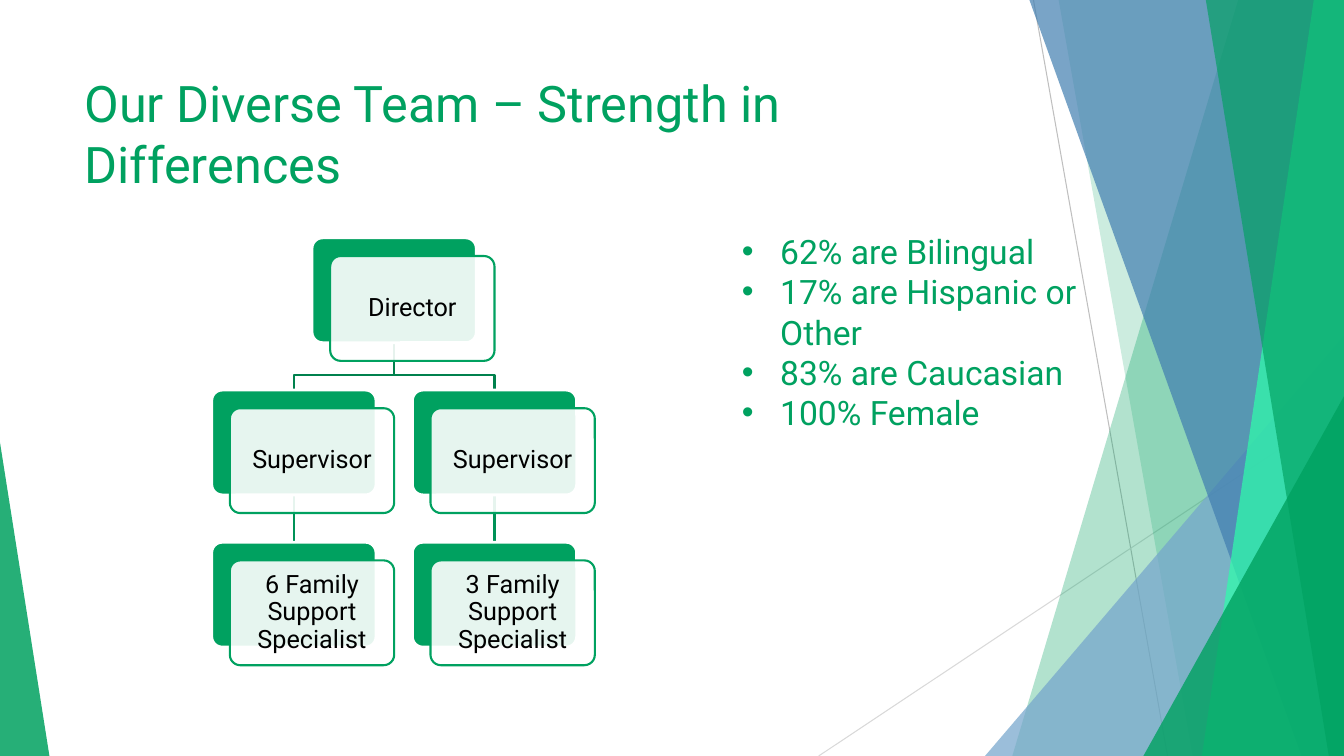
from lxml.etree import SubElement
from pptx import Presentation
from pptx.dml.color import RGBColor
from pptx.enum.shapes import MSO_CONNECTOR, MSO_SHAPE
from pptx.enum.text import MSO_ANCHOR, PP_ALIGN
from pptx.oxml.ns import qn
from pptx.util import Inches, Pt

GREEN = RGBColor(0x00, 0xA1, 0x60)
MINT = RGBColor(0x2E, 0xFF, 0xAA)
SKY = RGBColor(0x75, 0xA5, 0xCC)
BLUE = RGBColor(0x41, 0x7E, 0xB0)
UPPER_LINK = RGBColor(0x00, 0x81, 0x4D)
LOWER_LINK = RGBColor(0x00, 0x92, 0x57)
GRAY = RGBColor(0xBF, 0xBF, 0xBF)
LIGHT_GRAY = RGBColor(0xD9, 0xD9, 0xD9)
WHITE = RGBColor(0xFF, 0xFF, 0xFF)
BLACK = RGBColor(0x00, 0x00, 0x00)

WIDTH, HEIGHT = 13.33, 7.5
FONT = "Roboto"
TITLE = "Our Diverse Team – Strength in Differences"
FACTS = [
    "62% are Bilingual",
    "17% are Hispanic or Other",
    "83% are Caucasian",
    "100% Female",
]
TEAM = [
    ("Director", 0.5, 0),
    ("Supervisor", 0, 1),
    ("6 Family Support Specialist", 0, 2),
    ("Supervisor", 1, 1),
    ("3 Family Support Specialist", 1, 2),
]
LOWER_LINKS = [(3, 4), (1, 2)]
RAYS = [
    ((10.25, 0), (11.58, HEIGHT), GRAY),
    ((WIDTH, 4.03), (8.12, HEIGHT), LIGHT_GRAY),
]
FACETS = [
    ("band", 12.28, 10.04, GREEN, 30),
    ("band", 10.5, 11.83, GREEN, 20),
    ("right corner", 9.77, 3.33, SKY, 72),
    ("band", 10.21, 12.91, BLUE, 70),
    ("band", 13.03, 11.92, MINT, 70),
    ("band", 11.96, 13.18, GREEN, 65),
    ("right corner", 11.34, 3.93, GREEN, 80),
    ("left corner", 0.49, 4.39, GREEN, 85),
]
CHART_LEFT, CHART_TOP = 2.1, 2.36
COLUMN_PITCH, ROW_PITCH = 1.99, 1.51
CARD_WIDTH, CARD_HEIGHT, CARD_OFFSET = 1.63, 1.04, 0.18
BEND = 0.32


def set_attributes(target, values):
    """Set every named attribute of the target."""
    for name, value in values.items():
        setattr(target, name, value)


def paint(shape, color, opacity=100):
    """Give a shape a flat fill with the stated opacity and no line."""
    shape.shadow.inherit = False
    shape.fill.solid()
    shape.fill.fore_color.rgb = color
    shape.line.fill.background()
    if opacity < 100:
        tint = shape._element.spPr.find(qn("a:solidFill"))[0]
        SubElement(tint, qn("a:alpha")).set("val", str(opacity * 1000))


def outline(shape, color, width):
    """Give a shape or connector a solid line."""
    shape.line.color.rgb = color
    shape.line.width = Pt(width)


def add_path(slide, points, close):
    """Draw a freeform through points given in inches."""
    start, *others = [(Inches(x), Inches(y)) for x, y in points]
    builder = slide.shapes.build_freeform(*start)
    builder.add_line_segments(others, close=close)
    return builder.convert_to_shape()


def add_straight(slide, start, end, color, width):
    """Draw a straight connector without a shadow."""
    connector = slide.shapes.add_connector(
        MSO_CONNECTOR.STRAIGHT, *map(Inches, (*start, *end))
    )
    outline(connector, color, width)
    SubElement(connector._element.spPr, qn("a:effectLst"))
    return connector


def add_facets(slide):
    """Draw the rays and translucent facets at the slide's edges."""
    for start, end, color in RAYS:
        add_straight(slide, start, end, color, 0.75)
    for kind, first, second, color, opacity in FACETS:
        if kind == "band":
            points = [(first, 0), (WIDTH, 0), (WIDTH, HEIGHT), (second, HEIGHT)]
            facet = add_path(slide, points, True)
        else:
            on_right = kind == "right corner"
            left, right = (first, WIDTH) if on_right else (0, first)
            facet = slide.shapes.add_shape(
                MSO_SHAPE.ISOSCELES_TRIANGLE,
                *map(Inches, (left, second, right - left, HEIGHT - second)),
            )
            facet.adjustments[0] = 1 if on_right else 0
        paint(facet, color, opacity)


def write(frame, lines, size, color, bulleted=False):
    """Write lines as paragraphs in one text style."""
    frame.word_wrap = True
    for index, line in enumerate(lines):
        paragraph = frame.add_paragraph() if index else frame.paragraphs[0]
        paragraph.text = line
        if bulleted:
            properties = paragraph._p.get_or_add_pPr()
            properties.set("marL", str(Inches(0.38)))
            properties.set("indent", str(Inches(-0.38)))
            SubElement(properties, qn("a:buFont")).set("typeface", "Arial")
            SubElement(properties, qn("a:buChar")).set("char", "•")
        font = paragraph.runs[0].font
        set_attributes(font, {"name": FONT, "size": Pt(size)})
        font.color.rgb = color


def add_card(slide, name, left, top):
    """Draw a green card with a labelled pane over it, and return the card."""
    cards = []
    for offset, fill, opacity, line, width in (
        (0, GREEN, 100, WHITE, 2),
        (CARD_OFFSET, WHITE, 90, GREEN, 1.5),
    ):
        card = slide.shapes.add_shape(
            MSO_SHAPE.ROUNDED_RECTANGLE,
            *map(Inches, (left + offset, top + offset, CARD_WIDTH, CARD_HEIGHT)),
        )
        card.adjustments[0] = 0.1
        paint(card, fill, opacity)
        outline(card, line, width)
        cards.append(card)
    back, pane = cards
    write(pane.text_frame, [name], 18, BLACK)
    margins = {f"margin_{side}": Inches(0.07) for side in ("left", "top", "right", "bottom")}
    set_attributes(pane.text_frame, {**margins, "vertical_anchor": MSO_ANCHOR.MIDDLE})
    set_attributes(
        pane.text_frame.paragraphs[0],
        {"alignment": PP_ALIGN.CENTER, "line_spacing": 0.9},
    )
    return back


def add_team(slide):
    """Draw the organisation chart with its links behind the cards."""
    places = [
        (CHART_LEFT + column * COLUMN_PITCH, CHART_TOP + row * ROW_PITCH)
        for _, column, row in TEAM
    ]
    director_left, director_top = places[0]
    middle = director_left + CARD_WIDTH / 2
    bottom = director_top + CARD_HEIGHT
    links = []
    for upper, lower in LOWER_LINKS:
        left, top = places[upper]
        center = left + CARD_WIDTH / 2
        start, end = (center, top + CARD_HEIGHT), (center, places[lower][1])
        links.append(add_straight(slide, start, end, LOWER_LINK, 1.5))
        turn = bottom + BEND
        elbow = [(middle, bottom), (middle, turn), (center, turn), (center, top)]
        branch = add_path(slide, elbow, False)
        branch.shadow.inherit = False
        branch.fill.background()
        outline(branch, UPPER_LINK, 1.5)
    cards = [add_card(slide, name, *place) for (name, _, _), place in zip(TEAM, places)]
    for link, (upper, lower) in zip(links, LOWER_LINKS):
        link.begin_connect(cards[upper], 2)
        link.end_connect(cards[lower], 0)


def main():
    """Build and save the team slide."""
    presentation = Presentation()
    set_attributes(
        presentation,
        {"slide_width": Inches(WIDTH), "slide_height": Inches(HEIGHT)},
    )
    slide = presentation.slides.add_slide(presentation.slide_layouts[6])
    add_facets(slide)
    title = slide.shapes.add_textbox(*map(Inches, (0.74, 0.67, 9.4, 1.44)))
    write(title.text_frame, [TITLE], 36, GREEN)
    add_team(slide)
    facts = slide.shapes.add_textbox(*map(Inches, (7.26, 2.24, 4.03, 2.59)))
    write(facts.text_frame, FACTS, 24, GREEN, bulleted=True)
    presentation.save("out.pptx")


if __name__ == "__main__":
    main()
